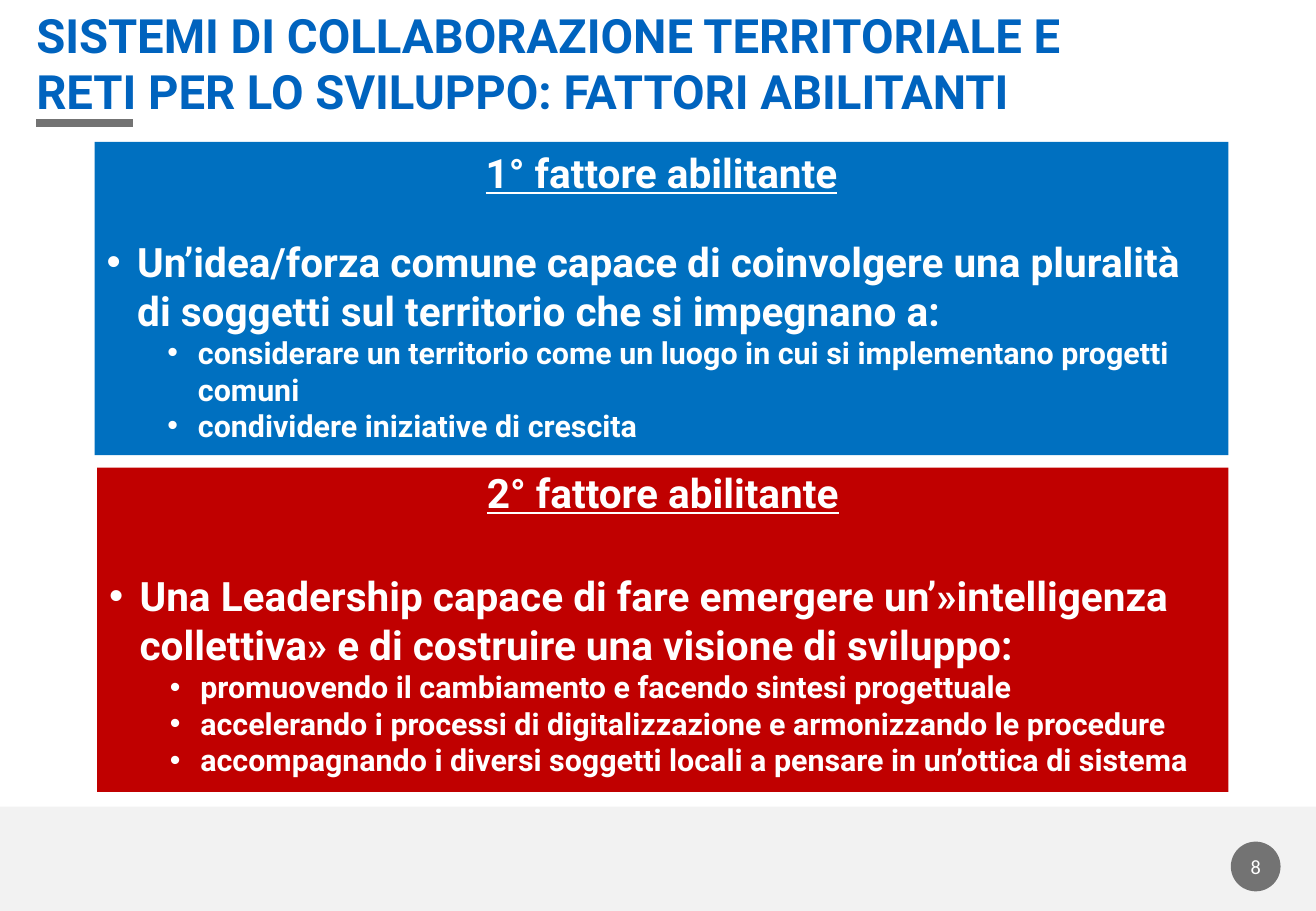
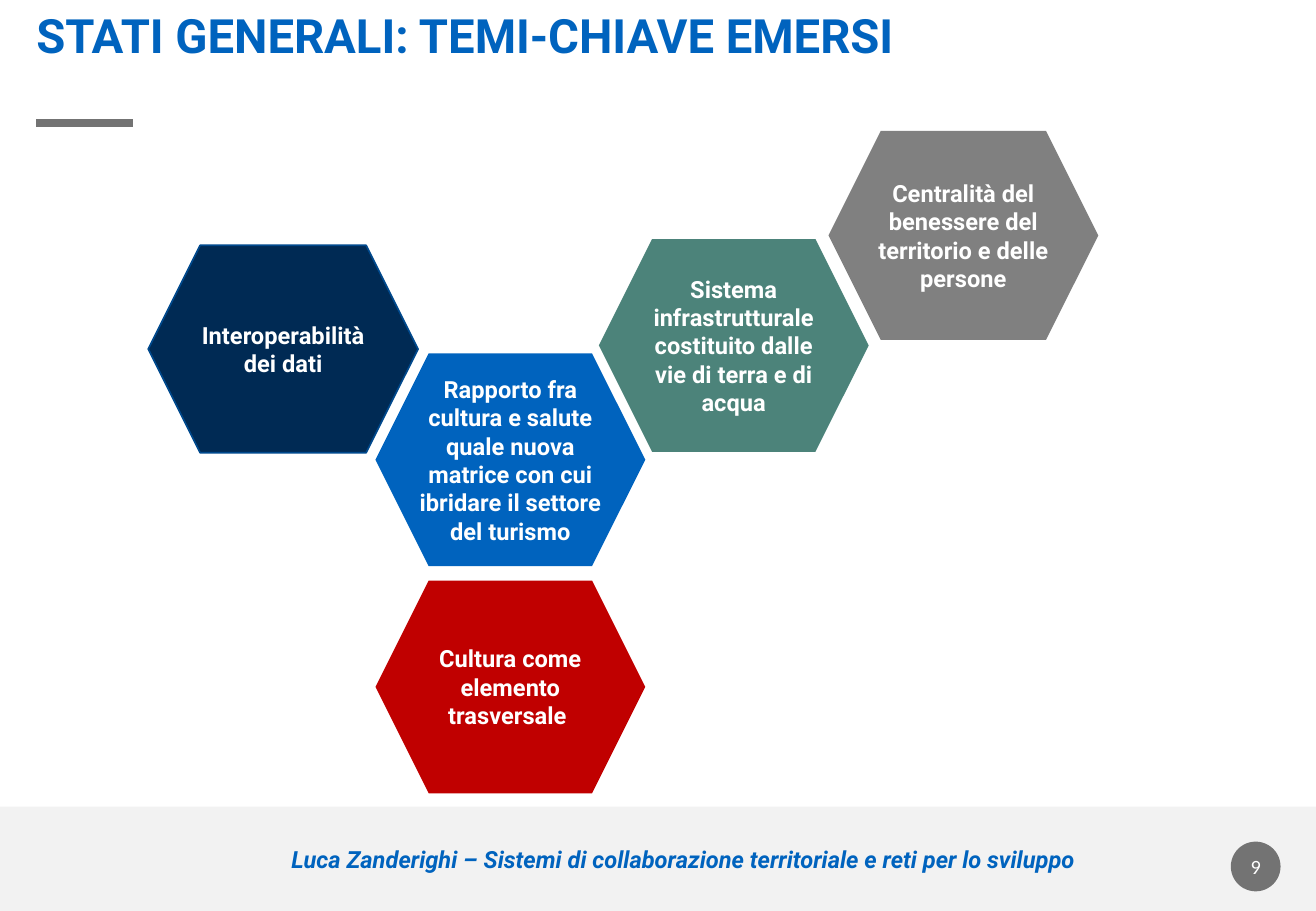
"""Builds two slides on enabling factors and key themes of territorial networks."""
from lxml.etree import SubElement
from pptx import Presentation
from pptx.dml.color import RGBColor
from pptx.enum.shapes import MSO_CONNECTOR as Link, MSO_SHAPE as Kind
from pptx.enum.text import MSO_ANCHOR as Anchor, PP_ALIGN as Align
from pptx.oxml.ns import qn
from pptx.util import Cm, Pt

BLUE, RED, GREY, WHITE = "0063BE", "C00000", "737373", "FFFFFF"


def draw(slide, kind, box, fill, edge=None):
    shape = slide.shapes.add_shape(kind, *map(Cm, box))
    shape.shadow.inherit = False
    shape.fill.solid()
    shape.fill.fore_color.rgb = RGBColor.from_string(fill)
    if edge:
        shape.line.color.rgb = RGBColor.from_string(edge)
        shape.line.width = Pt(1)
    else:
        shape.line.fill.background()
    shape.text_frame.word_wrap = True
    return shape.text_frame


def write(par, text, size, color=WHITE, align=Align.CENTER, face="Roboto", bold=True):
    par.alignment = align
    run = par.add_run()
    run.text = text
    font = run.font
    font.name, font.size, font.bold = face, Pt(size), bold
    font.color.rgb = RGBColor.from_string(color)
    return font


deck = Presentation()
deck.slide_width, deck.slide_height = Cm(27.51), Cm(19.05)

titles = [
    "SISTEMI DI COLLABORAZIONE TERRITORIALE E RETI PER LO SVILUPPO: FATTORI ABILITANTI",
    "STATI GENERALI: TEMI-CHIAVE EMERSI",
]
for page, title in enumerate(titles, 8):
    slide = deck.slides.add_slide(deck.slide_layouts[6])
    draw(slide, Kind.RECTANGLE, (0, 16.87, 27.51, 2.18), "F2F2F2")
    badge = draw(slide, Kind.OVAL, (25.73, 17.6, 1.04, 1.04), GREY)
    badge.margin_left = badge.margin_right = 0
    badge.vertical_anchor = Anchor.MIDDLE
    write(badge.paragraphs[0], str(page), 12, face="Calibri", bold=False)
    rule = slide.shapes.add_connector(Link.STRAIGHT, Cm(0.76), Cm(2.57), Cm(2.77), Cm(2.57))
    rule.line.color.rgb = RGBColor.from_string(GREY)
    rule.line.width = Pt(4.5)
    SubElement(rule.element.spPr, qn("a:effectLst"))
    head = slide.shapes.add_textbox(Cm(0.51), 0, Cm(23.06), Cm(2.3)).text_frame
    head.word_wrap = True
    write(head.paragraphs[0], title, 28, BLUE, Align.LEFT)

factors, themes = deck.slides

panels = [
    ((1.98, 2.97, 23.7, 6.55), "0070C0", 1, 24, "1° fattore abilitante",
     "Un’idea/forza comune capace di coinvolgere una pluralità di soggetti sul territorio "
     "che si impegnano a:",
     ["considerare un territorio come un luogo in cui si implementano progetti comuni",
      "condividere iniziative di crescita"]),
    ((2.03, 9.78, 23.65, 6.78), RED, 0.9, 32, "2° fattore abilitante",
     "Una Leadership capace di fare emergere un’»intelligenza collettiva» e di costruire "
     "una visione di sviluppo:",
     ["promuovendo il cambiamento e facendo sintesi progettuale",
      "accelerando i processi di digitalizzazione e armonizzando le procedure",
      "accompagnando i diversi soggetti locali a pensare in un’ottica di sistema"]),
]
for box, fill, pitch, gap, name, lead, points in panels:
    frame = draw(factors, Kind.RECTANGLE, box, fill)
    frame.vertical_anchor = Anchor.TOP
    top = frame.paragraphs[0]
    top.line_spacing = pitch
    write(top, name, 24).underline = True
    for rank, text in enumerate([lead] + points):
        par = frame.add_paragraph()
        par.level = min(rank, 1)
        props = par._p.get_or_add_pPr()
        props.set("marL", str(Cm(1.91 if rank else 0.64)))
        props.set("indent", str(Cm(-0.64)))
        if not rank:
            par.space_before = Pt(gap)
        SubElement(props, qn("a:buFont"), typeface="Arial")
        SubElement(props, qn("a:buChar"), char="•")
        write(par, text, 18 if rank else 24, align=Align.LEFT)

foot = themes.shapes.add_textbox(Cm(5.84), Cm(17.6), Cm(17.7), Cm(0.79)).text_frame
foot.word_wrap = True
foot.paragraphs[0].line_spacing = 0.9
write(foot.paragraphs[0],
      "Luca Zanderighi – Sistemi di collaborazione territoriale e reti per lo sviluppo",
      14, BLUE, Align.LEFT).italic = True

cells = [
    (7.85, 7.39, 4.45, BLUE, None,
     "Rapporto fra cultura e salute quale nuova matrice con cui ibridare il settore del turismo"),
    (7.85, 12.14, 4.45, RED, None, "Cultura come elemento trasversale "),
    (12.52, 5, 4.45, "4C837A", None,
     "Sistema infrastrutturale costituito dalle vie di terra e di acqua"),
    (17.32, 2.74, 4.37, "808080", None,
     "Centralità del benessere del territorio e delle persone"),
    (3.1, 5.13, 4.34, "002A54", "00498D", "Interoperabilità dei dati"),
]
for left, top, tall, fill, edge, text in cells:
    frame = draw(themes, Kind.HEXAGON, (left, top, 5.64, tall), fill, edge)
    frame.margin_left = frame.margin_right = 0
    frame.vertical_anchor = Anchor.MIDDLE
    write(frame.paragraphs[0], text, 14)

deck.save("out.pptx")
